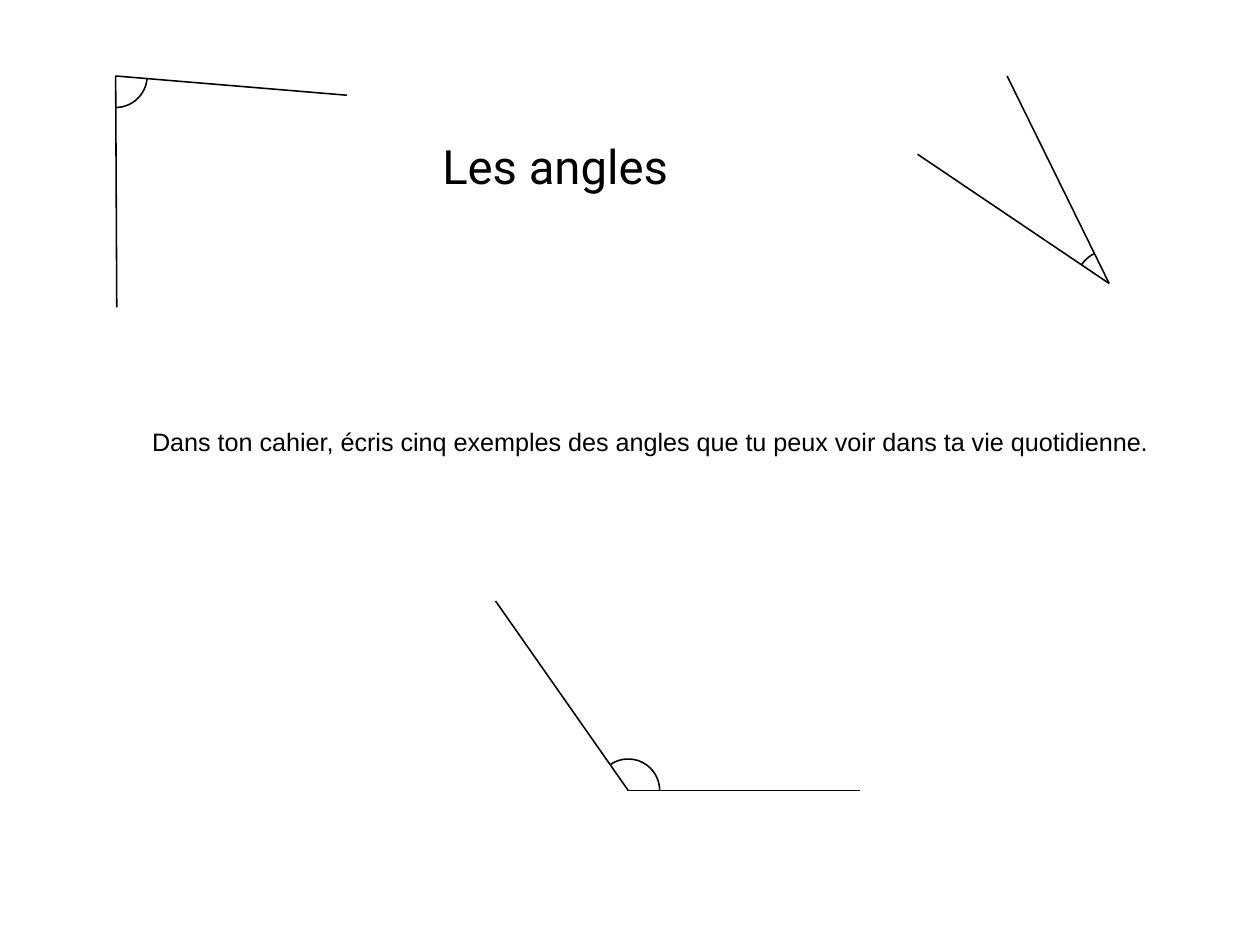
import math

import lxml.etree
import pptx
import pptx.dml.color
import pptx.enum.shapes
import pptx.enum.text
import pptx.oxml.ns
import pptx.util

COLUMNS, ROWS = 100, 75
ARC_STEPS = 16


def color(value):
    return pptx.dml.color.RGBColor.from_string(value)


def write_text(frame, text, *, font, size, ink):
    frame.word_wrap = False
    frame.auto_size = pptx.enum.text.MSO_AUTO_SIZE.NONE
    frame.vertical_anchor = pptx.enum.text.MSO_ANCHOR.TOP
    paragraph = frame.paragraphs[0]
    paragraph.alignment = pptx.enum.text.PP_ALIGN.LEFT
    paragraph.space_before = pptx.util.Pt(0)
    properties = paragraph._p.get_or_add_pPr()
    properties.set("marL", "0")
    properties.set("indent", "0")
    lxml.etree.SubElement(properties, pptx.oxml.ns.qn("a:buNone"))
    run = paragraph.add_run()
    run.text = text
    run.font.name = font
    run.font.size = pptx.util.Pt(size)
    run.font.color.rgb = color(ink)


class AngleSlide:
    ink = "000000"
    line_width = 1

    def __init__(self, presentation):
        self.slide = presentation.slides.add_slide(presentation.slide_layouts[1])
        self.slide.background.fill.solid()
        self.slide.background.fill.fore_color.rgb = color("FFFFFF")
        self.column = presentation.slide_width / COLUMNS
        self.row = presentation.slide_height / ROWS

    def point(self, x, y):
        return round(x * self.column), round(y * self.row)

    def text(self, index, text, x, y, width, height, font, size):
        shape = self.slide.placeholders[index]
        shape.left, shape.top = self.point(x, y)
        shape.width, shape.height = self.point(width, height)
        write_text(shape.text_frame, text, font=font, size=size, ink=self.ink)

    def outline(self, shape):
        shape.line.color.rgb = color(self.ink)
        shape.line.width = pptx.util.Pt(self.line_width)

    def ray(self, group, vertex, end):
        connector = group.shapes.add_connector(
            pptx.enum.shapes.MSO_CONNECTOR.STRAIGHT,
            *self.point(*vertex), *self.point(*end))
        self.outline(connector)
        lxml.etree.SubElement(connector._element.spPr, pptx.oxml.ns.qn("a:effectLst"))

    def arc(self, group, vertex, ends, radius):
        first, last = (math.atan2(y - vertex[1], x - vertex[0]) for x, y in ends)
        sweep = math.remainder(last - first, math.tau)
        directions = [first + sweep * step / ARC_STEPS for step in range(ARC_STEPS + 1)]
        points = [self.point(vertex[0] + radius * math.cos(direction),
                             vertex[1] + radius * math.sin(direction))
                  for direction in directions]
        builder = group.shapes.build_freeform(*points[0])
        builder.add_line_segments(points[1:], close=False)
        shape = builder.convert_to_shape()
        shape.fill.background()
        shape.shadow.inherit = False
        self.outline(shape)

    def angle(self, vertex, ends, radius):
        group = self.slide.shapes.add_group_shape()
        for end in ends:
            self.ray(group, vertex, end)
        self.arc(group, vertex, ends, radius)


def main():
    presentation = pptx.Presentation()
    presentation.slide_width = pptx.util.Inches(11.11)
    presentation.slide_height = pptx.util.Inches(8.33)
    page = AngleSlide(presentation)
    page.text(0, "Les angles", 34.2, 10.45, 32.4, 5.5, "Roboto", 30)
    page.text(1, "Dans ton cahier, écris cinq exemples des angles que tu peux voir "
                 "dans ta vie quotidienne.", 11.17, 33.4, 88.83, 3.33, "Arial", 16)
    page.angle((88.03, 22.5), [(79.93, 6.03), (72.82, 12.24)], 2.65)
    page.angle((49.86, 62.74), [(68.23, 62.74), (39.33, 47.7)], 2.5)
    page.angle((9.18, 6.03), [(9.27, 24.4), (27.54, 7.56)], 2.5)
    presentation.save("out.pptx")


if __name__ == "__main__":
    main()
